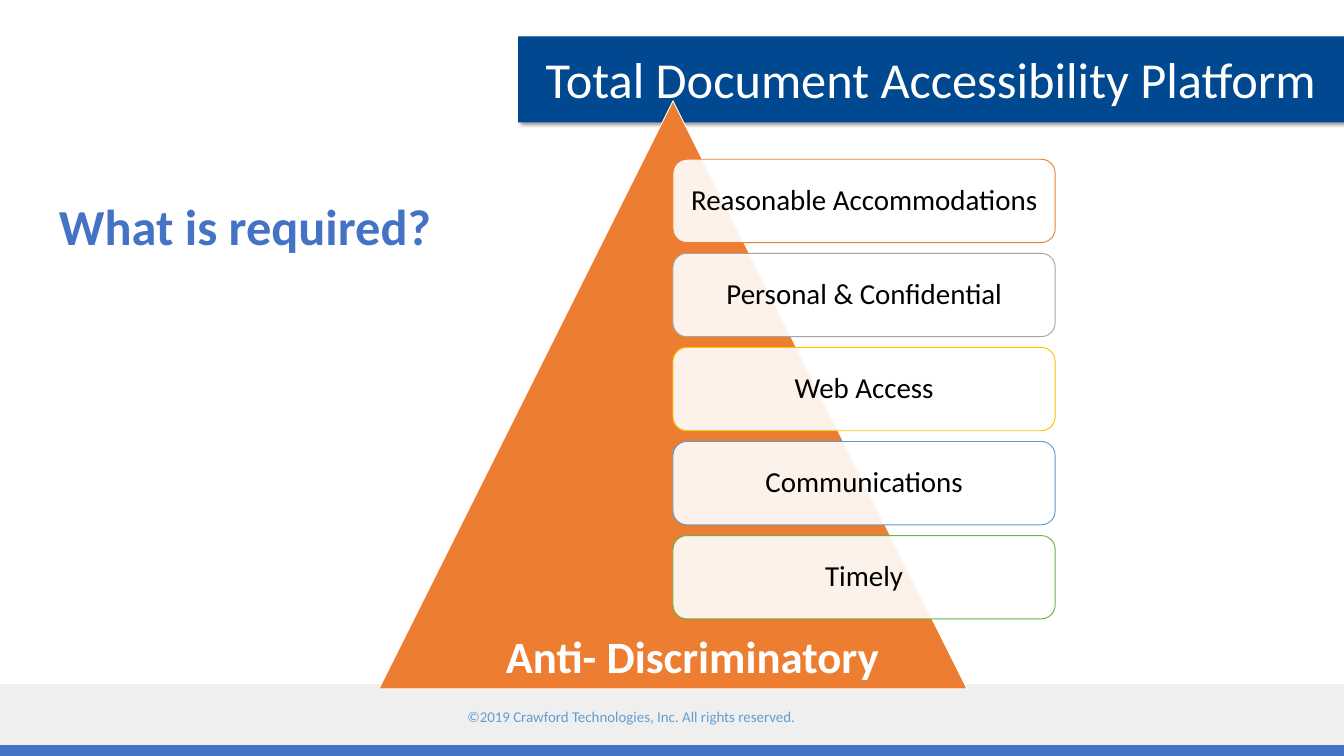
import pptx
import pptx.util
import pptx.dml.color
import pptx.enum.shapes
import pptx.enum.text
import pptx.oxml
import pptx.oxml.ns
from dataclasses import dataclass

Inches = pptx.util.Inches
Pt = pptx.util.Pt
SHAPE = pptx.enum.shapes.MSO_SHAPE
ALIGN = pptx.enum.text.PP_ALIGN
ANCHOR = pptx.enum.text.MSO_ANCHOR


@dataclass(frozen=True)
class Theme:
    font: str = "Calibri"
    white: str = "FFFFFF"
    black: str = "000000"
    navy: str = "004990"
    blue: str = "4472C4"
    sky: str = "629DD1"
    gray: str = "D9D9D9"
    orange: str = "ED7D31"
    card_lines: tuple = ("ED7D31", "A5A5A5", "FFC000", "5B9BD5", "70AD47")
    heading: int = 54
    base: int = 48
    card: int = 31
    footer: int = 16


THEME = Theme()
REQUIREMENTS = (
    "Reasonable Accommodations",
    "Personal & Confidential",
    "Web Access",
    "Communications",
    "Timely",
)


def rgb(color):
    return pptx.dml.color.RGBColor.from_string(color)


def add_shape(page, kind, box, fill, line=None, opacity=100):
    """Add a flat filled shape; box is left, top, width, height in inches."""
    shape = page.shapes.add_shape(kind, *map(Inches, box))
    shape.shadow.inherit = False
    shape.fill.solid()
    shape.fill.fore_color.rgb = rgb(fill)
    if opacity < 100:
        color = shape.fill._xPr.find(".//" + pptx.oxml.ns.qn("a:srgbClr"))
        color.append(pptx.oxml.parse_xml(
            f'<a:alpha {pptx.oxml.ns.nsdecls("a")} val="{opacity * 1000}"/>'))
    if line:
        shape.line.color.rgb = rgb(line)
        shape.line.width = Pt(1)
    else:
        shape.line.fill.background()
    return shape


def write(shape, text, size, color, bold=False, frame_format=None, **para_format):
    frame = shape.text_frame
    para = frame.paragraphs[0]
    span = para.add_run()
    span.text = text
    span.font.color.rgb = rgb(color)
    formats = (
        (frame, {"word_wrap": True, **(frame_format or {})}),
        (para, para_format),
        (span.font, {"name": THEME.font, "size": Pt(size), "bold": bold}),
    )
    for target, values in formats:
        for name, value in values.items():
            setattr(target, name, value)


def add_text(page, box, *content, **options):
    write(page.shapes.add_textbox(*map(Inches, box)), *content, **options)


def add_banner(page, box):
    left, top, width, height = box
    bar = add_shape(page, SHAPE.RECTANGLE, box, THEME.navy)
    effects = bar._element.spPr.find(pptx.oxml.ns.qn("a:effectLst"))
    effects.append(pptx.oxml.parse_xml(
        f'<a:outerShdw {pptx.oxml.ns.nsdecls("a")} blurRad="{Pt(4)}" dist="{Pt(3)}"'
        f' dir="{45 * 60000}" algn="tl" rotWithShape="0"><a:srgbClr val="{THEME.black}">'
        '<a:alpha val="40000"/></a:srgbClr></a:outerShdw>'))
    add_text(page, (left, top + 0.12, width, 1.01), "Total Document Accessibility Platform",
             THEME.heading, THEME.white, alignment=ALIGN.CENTER)


def add_footer(page, box):
    left, top, width, height = box
    add_shape(page, SHAPE.RECTANGLE, box, THEME.gray, opacity=40)
    add_shape(page, SHAPE.RECTANGLE, (left, top + height - 0.23, width, 0.23), THEME.blue)
    add_text(page, (left + 5.96, top + 0.35, 6.92, 0.32),
             "©2019 Crawford Technologies, Inc. All rights reserved. ",
             THEME.footer, THEME.sky, alignment=ALIGN.CENTER, line_spacing=0.8)


def add_pyramid(page, box):
    """Draw the triangle, its requirement cards and the label at its base."""
    left, top, width, height = box
    add_shape(page, SHAPE.ISOSCELES_TRIANGLE, box, THEME.orange, THEME.white)
    margins = dict.fromkeys(
        ("margin_left", "margin_right", "margin_top", "margin_bottom"), Inches(0.19))
    card_height, pitch = 1.24, 1.4
    for index, (text, line) in enumerate(zip(REQUIREMENTS, THEME.card_lines)):
        card_box = (left + width / 2, top + 0.87 + index * pitch, 0.65 * width, card_height)
        card = add_shape(page, SHAPE.ROUNDED_RECTANGLE, card_box, THEME.white, line, 90)
        write(card, text, THEME.card, THEME.black,
              frame_format={"vertical_anchor": ANCHOR.MIDDLE, **margins},
              alignment=ALIGN.CENTER, line_spacing=0.9)
    add_text(page, (left + 1.62, top + 7.89, 6.09, 1.08), "Anti- Discriminatory",
             THEME.base, THEME.white, bold=True, alignment=ALIGN.CENTER, line_spacing=0.9)


def main():
    deck = pptx.Presentation()
    deck.slide_width, deck.slide_height = Inches(20), Inches(11.25)
    page = deck.slides.add_slide(deck.slide_layouts[6])
    add_banner(page, (7.71, 0.54, 12.29, 1.28))
    add_footer(page, (0, 10.18, 20, 1.14))
    add_text(page, (0.78, 2.96, 14, 1.15), "What is required?",
             THEME.heading, THEME.blue, bold=True, line_spacing=0.9)
    add_pyramid(page, (5.64, 1.5, 8.75, 8.75))
    deck.save("out.pptx")


if __name__ == "__main__":
    main()
